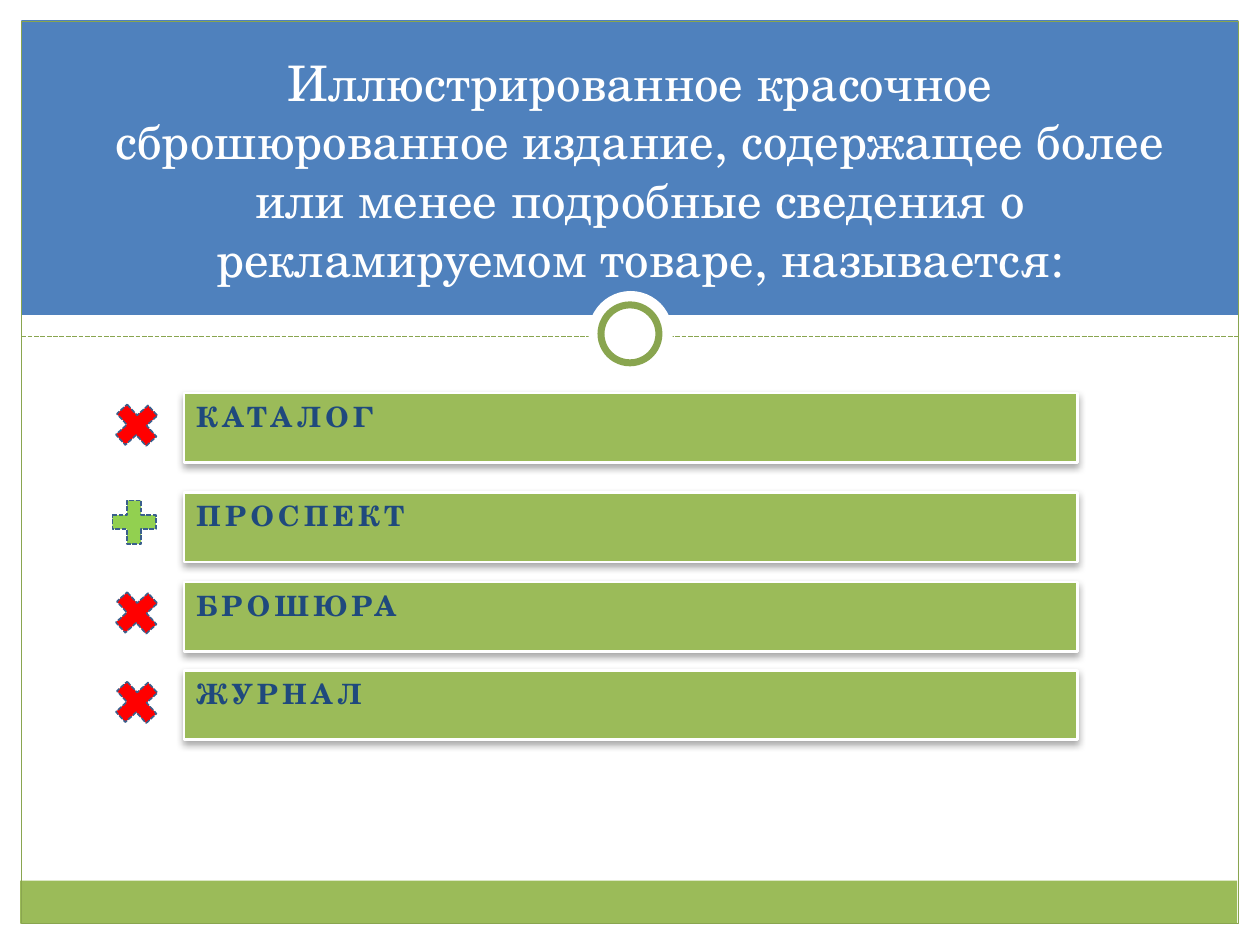
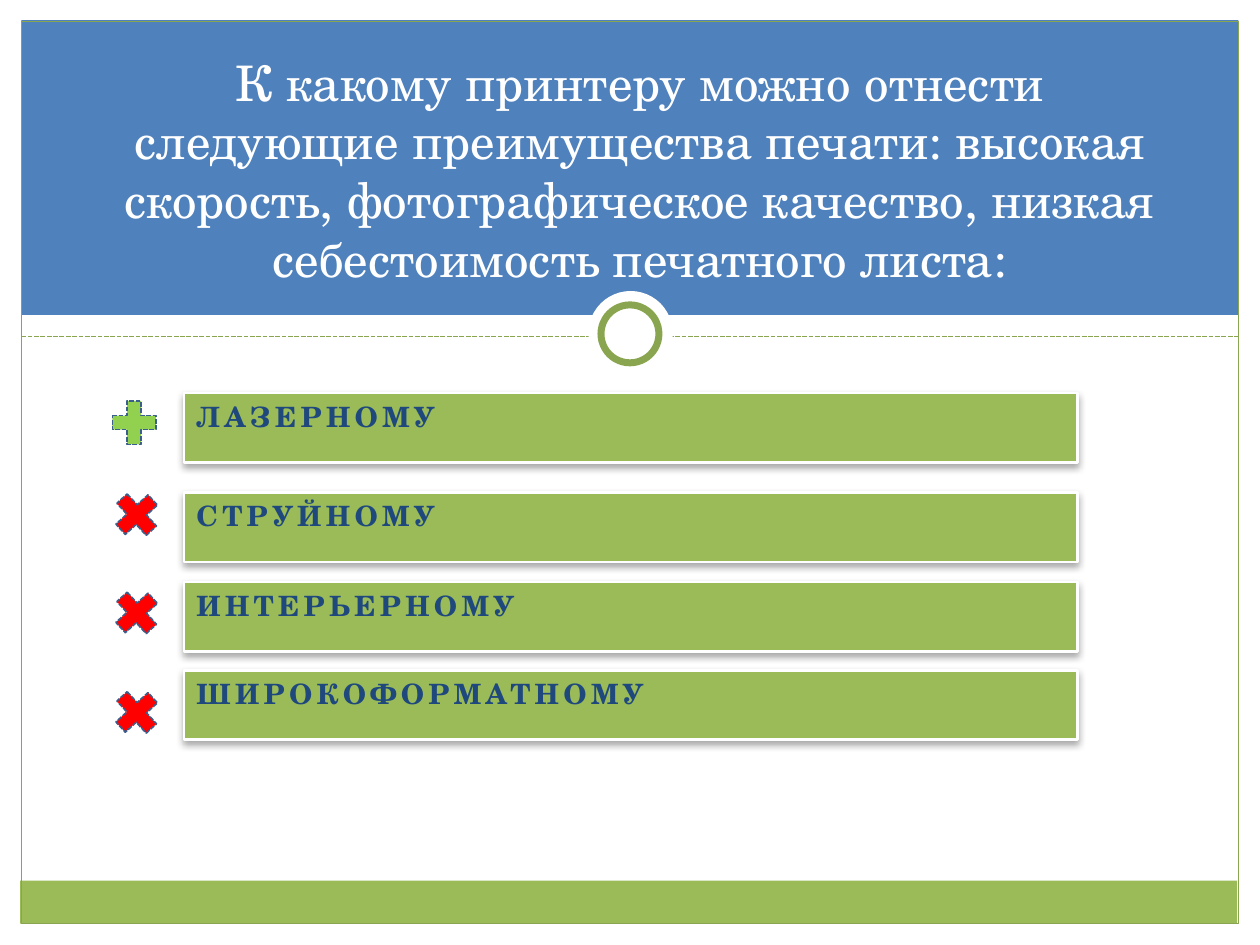
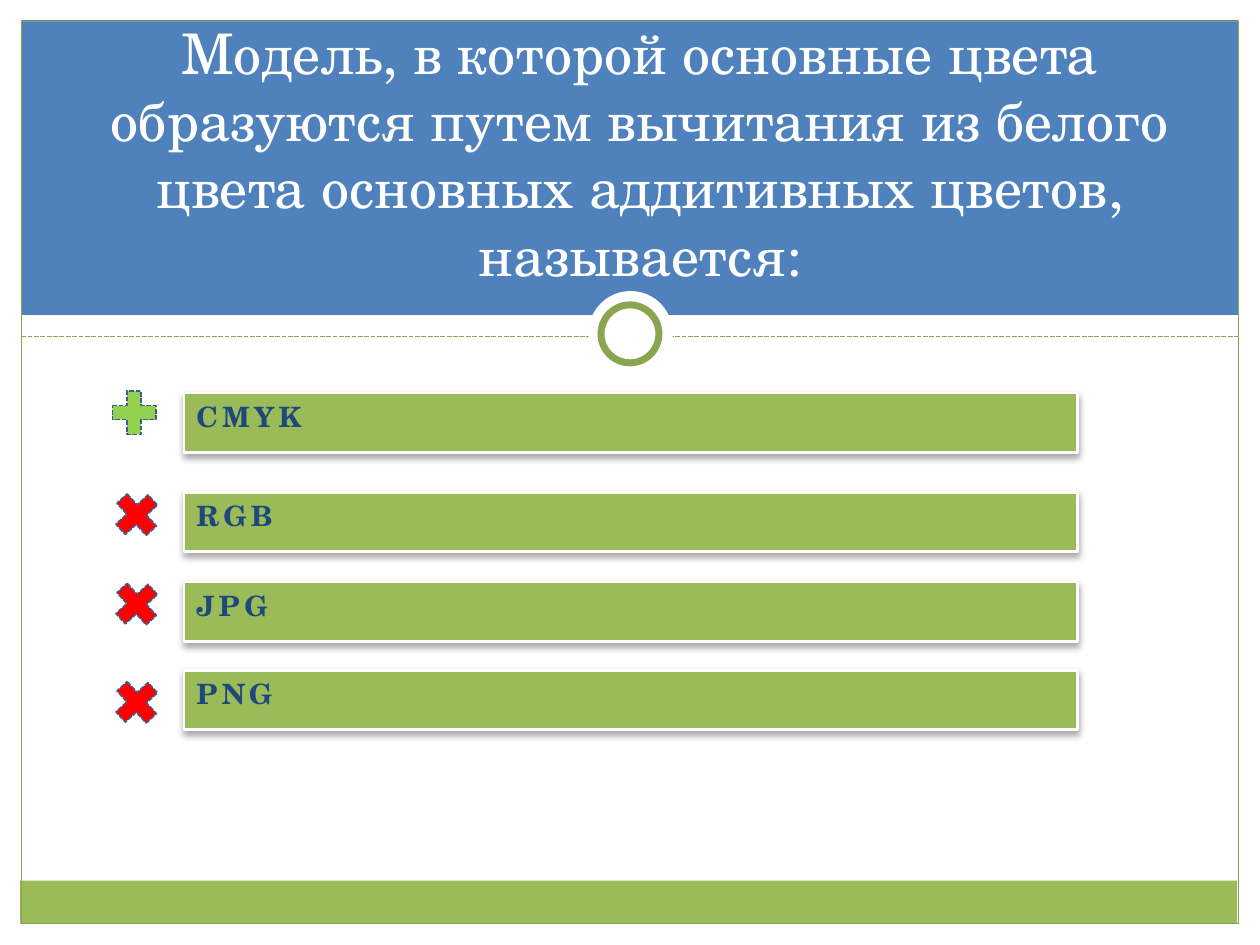
"""Build three quiz slides with answer bars and right or wrong marks."""

from dataclasses import dataclass
from typing import NamedTuple, Optional

from lxml import etree
from pptx import Presentation
from pptx import util as u
from pptx.dml.color import RGBColor
from pptx.enum import dml, shapes, text
from pptx.oxml import ns


@dataclass(frozen=True)
class Theme:
    """Colours, type sizes and line weights of the deck."""

    font: str = "TeX Gyre Schola"
    white: str = "FFFFFF"
    blue: str = "4F81BD"
    navy: str = "1F497D"
    green: str = "9BBB59"
    dark_green: str = "89A54F"
    right: str = "92D050"
    wrong: str = "FF0000"
    mark_edge: str = "3A5F8C"
    shadow: str = "000000"
    answer_size: float = 16
    letter_spacing: float = 2.5
    thin: float = 0.75
    dashed: float = 0.9
    bar_edge: float = 1.57
    ring: float = 4


class Area(NamedTuple):
    """Place on the grid, in columns and rows."""

    column: float
    row: float
    columns: float
    rows: float


class Stroke(NamedTuple):
    """Outline colour, weight and dash."""

    colour: str
    weight: float
    dashed: bool = False


class Figure(NamedTuple):
    """Preset shape with its fill and outline."""

    area: Area
    fill: Optional[str] = None
    stroke: Optional[Stroke] = None
    preset: shapes.MSO_SHAPE = shapes.MSO_SHAPE.RECTANGLE
    rotation: float = 0


class Answer(NamedTuple):
    """Answer wording and the row of its mark."""

    wording: str
    mark_row: float


class Question(NamedTuple):
    """Title, answers and the index of the right answer."""

    title: str
    title_size: float
    bar_rows: float
    right: int
    answers: tuple[Answer, ...]


THEME = Theme()
WIDTH, HEIGHT = u.Inches(10), u.Inches(7.5)
COLUMNS, ROWS = 100, 75
MARGIN = 1.7
INNER = COLUMNS - 2 * MARGIN
DIVIDER_ROW = 26.7
BAR_TOPS = (31.2, 39.1, 46.2, 53.2)
TITLE_AREA = Area(6.7, 13.1, 88.2, 10.2)
FOOT = ROWS - MARGIN

EDGES = (
    Figure(Area(0, FOOT, COLUMNS, MARGIN), THEME.white),
    Figure(Area(0, 0, COLUMNS, MARGIN), THEME.white),
    Figure(Area(COLUMNS - MARGIN, 0, MARGIN, ROWS), THEME.white),
    Figure(Area(MARGIN, 25, INNER, 3.3), THEME.white),
    Figure(Area(MARGIN, 1.6, INNER, 23.4), THEME.blue),
    Figure(Area(1.6, FOOT - 3.4, INNER, 3.4), THEME.green),
    Figure(Area(MARGIN, MARGIN, INNER, FOOT - MARGIN), None,
           Stroke(THEME.dark_green, THEME.thin)),
)
RINGS = (
    Figure(Area(46.7, 23.1, 6.7, 6.7), THEME.white,
           preset=shapes.MSO_SHAPE.OVAL),
    Figure(Area(47.7, 24.2, 4.6, 4.6), THEME.white,
           Stroke(THEME.dark_green, THEME.ring), shapes.MSO_SHAPE.OVAL),
)
QUESTIONS = (
    Question(
        "Иллюстрированное красочное сброшюрованное издание, содержащее более "
        "или менее подробные сведения о рекламируемом товаре, называется:",
        28, 5.5, 1,
        (Answer("КАТАЛОГ", 31.4), Answer("ПРОСПЕКТ", 39.1),
         Answer("БРОШЮРА", 46.3), Answer("ЖУРНАЛ", 53.4)),
    ),
    Question(
        "К какому принтеру можно отнести следующие преимущества печати: "
        "высокая скорость, фотографическое качество, низкая себестоимость "
        "печатного листа:",
        28, 5.5, 0,
        (Answer("ЛАЗЕРНОМУ", 31.2), Answer("СТРУЙНОМУ", 38.5),
         Answer("ИНТЕРЬЕРНОМУ", 46.3), Answer("ШИРОКОФОРМАТНОМУ", 54.2)),
    ),
    Question(
        "Модель, в которой основные цвета образуются путем вычитания из "
        "белого цвета основных аддитивных цветов, называется:",
        32, 4.7, 0,
        (Answer("CMYK", 30.4), Answer("RGB", 38.5),
         Answer("JPG", 45.6), Answer("PNG", 53.4)),
    ),
)


def across(columns: float) -> int:
    """Turn grid columns into a length."""
    return round(WIDTH * columns / COLUMNS)


def down(rows: float) -> int:
    """Turn grid rows into a length."""
    return round(HEIGHT * rows / ROWS)


def place(area: Area) -> tuple[int, int, int, int]:
    """Turn a grid area into left, top, width and height."""
    return (across(area.column), down(area.row),
            across(area.columns), down(area.rows))


def apply_stroke(line, stroke: Stroke) -> None:
    """Give a line its colour, weight and dash."""
    line.color.rgb = RGBColor.from_string(stroke.colour)
    line.width = u.Pt(stroke.weight)
    if stroke.dashed:
        line.dash_style = dml.MSO_LINE.SQUARE_DOT


def add_figure(page, figure: Figure):
    """Draw a preset shape."""
    shape = page.shapes.add_shape(figure.preset, *place(figure.area))
    shape.shadow.inherit = False
    shape.rotation = figure.rotation
    if figure.fill:
        shape.fill.solid()
        shape.fill.fore_color.rgb = RGBColor.from_string(figure.fill)
    else:
        shape.fill.background()
    if figure.stroke:
        apply_stroke(shape.line, figure.stroke)
    else:
        shape.line.fill.background()
    return shape


def add_divider(page) -> None:
    """Draw the dashed line under the title band."""
    y = down(DIVIDER_ROW)
    line = page.shapes.add_connector(
        shapes.MSO_CONNECTOR.STRAIGHT,
        across(MARGIN), y, across(COLUMNS - MARGIN), y)
    apply_stroke(line.line, Stroke(THEME.dark_green, THEME.dashed, True))
    etree.SubElement(line._element.spPr, ns.qn("a:effectLst"))


def write(box, wording: str, size: float, colour: str, align, anchor):
    """Write one paragraph into a box and return its run."""
    frame = box.text_frame
    frame.word_wrap = True
    frame.vertical_anchor = anchor
    para = frame.paragraphs[0]
    para.alignment = align
    span = para.add_run()
    span.text = wording
    span.font.name = THEME.font
    span.font.size = u.Pt(size)
    span.font.color.rgb = RGBColor.from_string(colour)
    return span


def add_shadow(shape) -> None:
    """Cast a soft shadow below a shape."""
    effects = shape._element.spPr.find(ns.qn("a:effectLst"))
    shadow = etree.SubElement(
        effects, ns.qn("a:outerShdw"), blurRad=str(u.Pt(4)),
        dist=str(u.Pt(2)), dir="5400000", rotWithShape="0")
    colour = etree.SubElement(shadow, ns.qn("a:srgbClr"), val=THEME.shadow)
    etree.SubElement(colour, ns.qn("a:alpha"), val="35000")


def add_bar(page, wording: str, row: float, rows: float) -> None:
    """Draw an answer bar."""
    bar = add_figure(page, Figure(Area(14.6, row, 70.9, rows), THEME.green,
                                  Stroke(THEME.white, THEME.bar_edge)))
    add_shadow(bar)
    span = write(bar, wording, THEME.answer_size, THEME.navy,
                 text.PP_ALIGN.LEFT, text.MSO_ANCHOR.TOP)
    span.font.bold = True
    span._r.get_or_add_rPr().set("spc", str(round(THEME.letter_spacing * 100)))


def add_mark(page, row: float, right: bool) -> None:
    """Draw a plus for the right answer or a cross for a wrong one."""
    add_figure(page, Figure(
        Area(8.3 if right else 8.5, row, 4.7, 4.7),
        THEME.right if right else THEME.wrong,
        Stroke(THEME.mark_edge, THEME.dashed, True),
        shapes.MSO_SHAPE.MATH_PLUS, 0 if right else 47.6))


def add_question(deck, question: Question) -> None:
    """Add one question page."""
    page = deck.slides.add_slide(deck.slide_layouts[6])
    for figure in EDGES:
        add_figure(page, figure)
    add_divider(page)
    for ring in RINGS:
        add_figure(page, ring)
    title = page.shapes.add_textbox(*place(TITLE_AREA))
    write(title, question.title, question.title_size, THEME.white,
          text.PP_ALIGN.CENTER, text.MSO_ANCHOR.BOTTOM)
    for index, (answer, row) in enumerate(zip(question.answers, BAR_TOPS)):
        add_bar(page, answer.wording, row, question.bar_rows)
        add_mark(page, answer.mark_row, index == question.right)


def main() -> None:
    """Build and save the deck."""
    deck = Presentation()
    deck.slide_width, deck.slide_height = WIDTH, HEIGHT
    for question in QUESTIONS:
        add_question(deck, question)
    deck.save("out.pptx")


if __name__ == "__main__":
    main()
